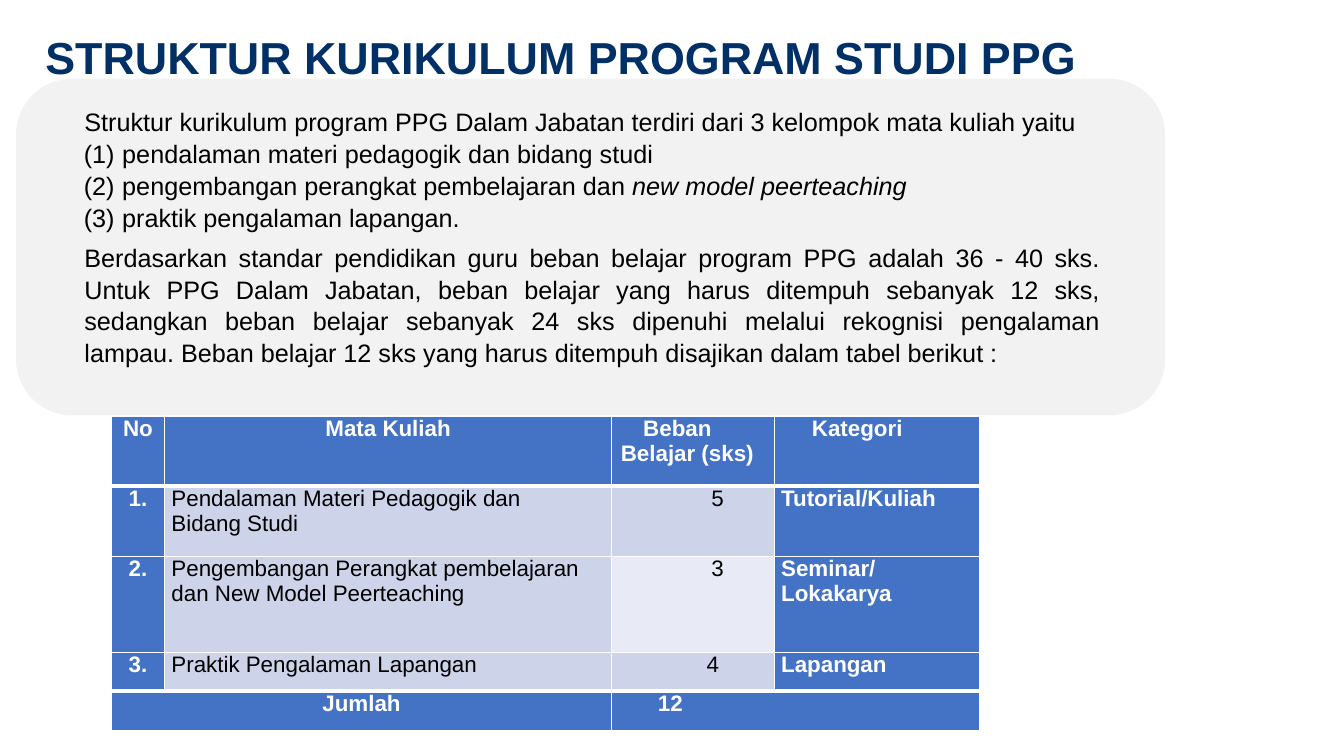
from dataclasses import dataclass

from lxml.etree import SubElement
from pptx import Presentation
from pptx.dml.color import RGBColor as Rgb
from pptx.enum.shapes import MSO_SHAPE as Form
from pptx.enum.text import MSO_ANCHOR as Anchor, MSO_AUTO_SIZE as Fit, PP_ALIGN as Align
from pptx.oxml import parse_xml
from pptx.oxml.ns import nsdecls, qn
from pptx.util import Pt


@dataclass(frozen=True)
class Theme:
    font: str = "Arial"
    navy: str = "013066"
    panel: str = "F2F2F2"
    blue: str = "4472C4"
    tint: str = "CDD4EA"
    pale: str = "E8EBF5"
    ink: str = "000000"
    white: str = "FFFFFF"
    head: float = 32
    body: float = 18
    grid: float = 16
    thin: float = 1
    thick: float = 3


THEME = Theme()


@dataclass(frozen=True)
class Para:
    runs: tuple[str, ...]  # every second run is italic
    left: float = 30
    first: float = 0
    right: float = 0
    line: float = 1.05
    before: float = 0
    align: Align = Align.LEFT
    number: bool = False


@dataclass(frozen=True)
class Cell:
    text: str
    fill: str = THEME.blue
    align: Align = Align.LEFT
    left: float = 0
    right: float = 0
    first: float = 0
    span: int = 1


def apply(item, values: dict) -> None:
    for name, value in values.items():
        setattr(item, name, value)


def style(run, size: float, color: str, **extra) -> None:
    apply(run.font, {"name": THEME.font, "size": Pt(size), **extra})
    run.font.color.rgb = Rgb.from_string(color)


def indent(para, left: float, first: float, right: float = 0) -> None:
    props = para._p.get_or_add_pPr()
    for name, value in {"marL": left, "indent": first, "marR": right}.items():
        props.set(name, str(Pt(value)))


def write(para, data: Para) -> None:
    apply(para, {"alignment": data.align, "line_spacing": data.line,
                 "space_before": Pt(data.before)})
    indent(para, data.left, data.first, data.right)
    if data.number:
        SubElement(para._p.pPr, qn("a:buFont"), typeface=THEME.font)
        SubElement(para._p.pPr, qn("a:buAutoNum"), type="arabicParenBoth")
    for i, text in enumerate(data.runs):
        run = para.add_run()
        run.text = text
        style(run, THEME.body, THEME.ink, italic=i % 2 == 1)


def border(cell, top: float, bottom: float) -> None:
    sides = {"L": THEME.thin, "R": THEME.thin, "T": top, "B": bottom}
    for i, (side, width) in enumerate(sides.items()):
        cell._tc.get_or_add_tcPr().insert(i, parse_xml(
            f'<a:ln{side} {nsdecls("a")} w="{Pt(width)}"><a:solidFill>'
            f'<a:srgbClr val="{THEME.white}"/></a:solidFill></a:ln{side}>'))


def fill_cell(cell, data: Cell, top: float, bottom: float) -> None:
    apply(cell, {"margin_left": Pt(data.left), "margin_right": Pt(data.right),
                 "margin_top": 0, "margin_bottom": 0, "vertical_anchor": Anchor.TOP})
    cell.fill.solid()
    cell.fill.fore_color.rgb = Rgb.from_string(data.fill)
    border(cell, top, bottom)
    para = cell.text_frame.paragraphs[0]
    para.alignment = data.align
    indent(para, 0, data.first)
    run = para.add_run()
    run.text = data.text
    strong = data.fill == THEME.blue
    style(run, THEME.grid, THEME.white if strong else THEME.ink, bold=strong)


def add_title(slide, text: str) -> None:
    title = slide.shapes.title
    apply(title, {"left": Pt(32.4), "top": Pt(17.3), "width": Pt(841), "height": Pt(38.9)})
    frame = title.text_frame
    apply(frame, {"margin_left": 0, "margin_right": 0, "margin_top": Pt(3.6),
                  "margin_bottom": 0, "word_wrap": True, "auto_size": Fit.NONE,
                  "vertical_anchor": Anchor.TOP})
    para = frame.paragraphs[0]
    apply(para, {"alignment": Align.LEFT, "line_spacing": 1.0, "space_before": Pt(0)})
    run = para.add_run()
    run.text = text
    style(run, THEME.head, THEME.navy, bold=True)


def add_panel(slide, paras: list[Para]) -> None:
    panel = slide.shapes.add_shape(
        Form.ROUNDED_RECTANGLE, Pt(11.5), Pt(56.2), Pt(820.8), Pt(240.5))
    panel.adjustments[0] = 0.167
    panel.shadow.inherit = False
    panel.fill.solid()
    panel.fill.fore_color.rgb = Rgb.from_string(THEME.panel)
    panel.line.fill.background()
    frame = panel.text_frame
    apply(frame, {"word_wrap": True, "vertical_anchor": Anchor.TOP, "margin_top": Pt(8.3),
                  "margin_left": Pt(7.2), "margin_right": Pt(7.2)})
    for i, data in enumerate(paras):
        write(frame.add_paragraph() if i else frame.paragraphs[0], data)


def add_grid(slide, rows: list[list[Cell]], widths: list[float], heights: list[float]) -> None:
    table = slide.shapes.add_table(len(rows), len(widths), Pt(79.5), Pt(297.4),
                                   Pt(sum(widths)), Pt(sum(heights))).table
    apply(table, {"first_row": False, "horz_banding": False})
    for col, width in zip(table.columns, widths):
        col.width = Pt(width)
    for row, height in zip(table.rows, heights):
        row.height = Pt(height)
    last = len(rows) - 1
    for r, row in enumerate(rows):
        top = THEME.thick if r in (1, last) else THEME.thin
        bottom = THEME.thick if r in (0, last - 1) else THEME.thin
        c = 0
        for data in row:
            cell = table.cell(r, c)
            if data.span > 1:
                cell.merge(table.cell(r, c + data.span - 1))
            fill_cell(cell, data, top, bottom)
            c += data.span


def course(number: int, name: str, load: int, kind: str,
           fill: str = THEME.tint, right: float = 36) -> list[Cell]:
    return [Cell(f"{number}.", align=Align.CENTER),
            Cell(name, THEME.tint, left=5, right=20),
            Cell(str(load), fill, Align.RIGHT, right=right),
            Cell(kind, left=5)]


ITEM = {"left": 57, "first": -27.4, "number": True}
PARAS = [
    Para(("Struktur kurikulum program PPG Dalam Jabatan terdiri dari 3 kelompok "
          "mata kuliah yaitu",), line=1.0),
    Para(("pendalaman materi pedagogik dan bidang studi",), **ITEM),
    Para(("pengembangan perangkat pembelajaran dan ", "new model peerteaching"), **ITEM),
    Para(("praktik pengalaman lapangan.",), **ITEM),
    Para(("Berdasarkan standar pendidikan guru beban belajar program PPG adalah "
          "36 - 40 sks. Untuk PPG Dalam Jabatan, beban belajar yang harus ditempuh "
          "sebanyak 12 sks, sedangkan beban belajar sebanyak 24 sks dipenuhi melalui "
          "rekognisi pengalaman lampau. Beban belajar 12 sks yang harus ditempuh "
          "disajikan dalam tabel berikut :",), right=27.7, before=6, align=Align.JUSTIFY),
]
ROWS = [
    [Cell("No", align=Align.CENTER), Cell("Mata Kuliah", align=Align.CENTER),
     Cell("Beban Belajar (sks)", left=6.5, first=16), Cell("Kategori", left=27)],
    course(1, "Pendalaman Materi Pedagogik dan Bidang Studi", 5, "Tutorial/Kuliah"),
    course(2, "Pengembangan Perangkat pembelajaran dan New Model Peerteaching", 3,
           "Seminar/ Lokakarya", THEME.pale),
    course(3, "Praktik Pengalaman Lapangan", 4, "Lapangan", right=39.5),
    [Cell("Jumlah", align=Align.CENTER, span=2), Cell("12", left=33, span=2)],
]


def main() -> None:
    deck = Presentation()
    apply(deck, {"slide_width": Pt(960), "slide_height": Pt(540)})
    slide = deck.slides.add_slide(deck.slide_layouts[5])
    add_title(slide, "STRUKTUR KURIKULUM PROGRAM STUDI PPG")
    add_panel(slide, PARAS)
    add_grid(slide, ROWS, [38, 319.5, 116, 147], [50, 50, 68.5, 28, 28])
    deck.save("out.pptx")


if __name__ == "__main__":
    main()
